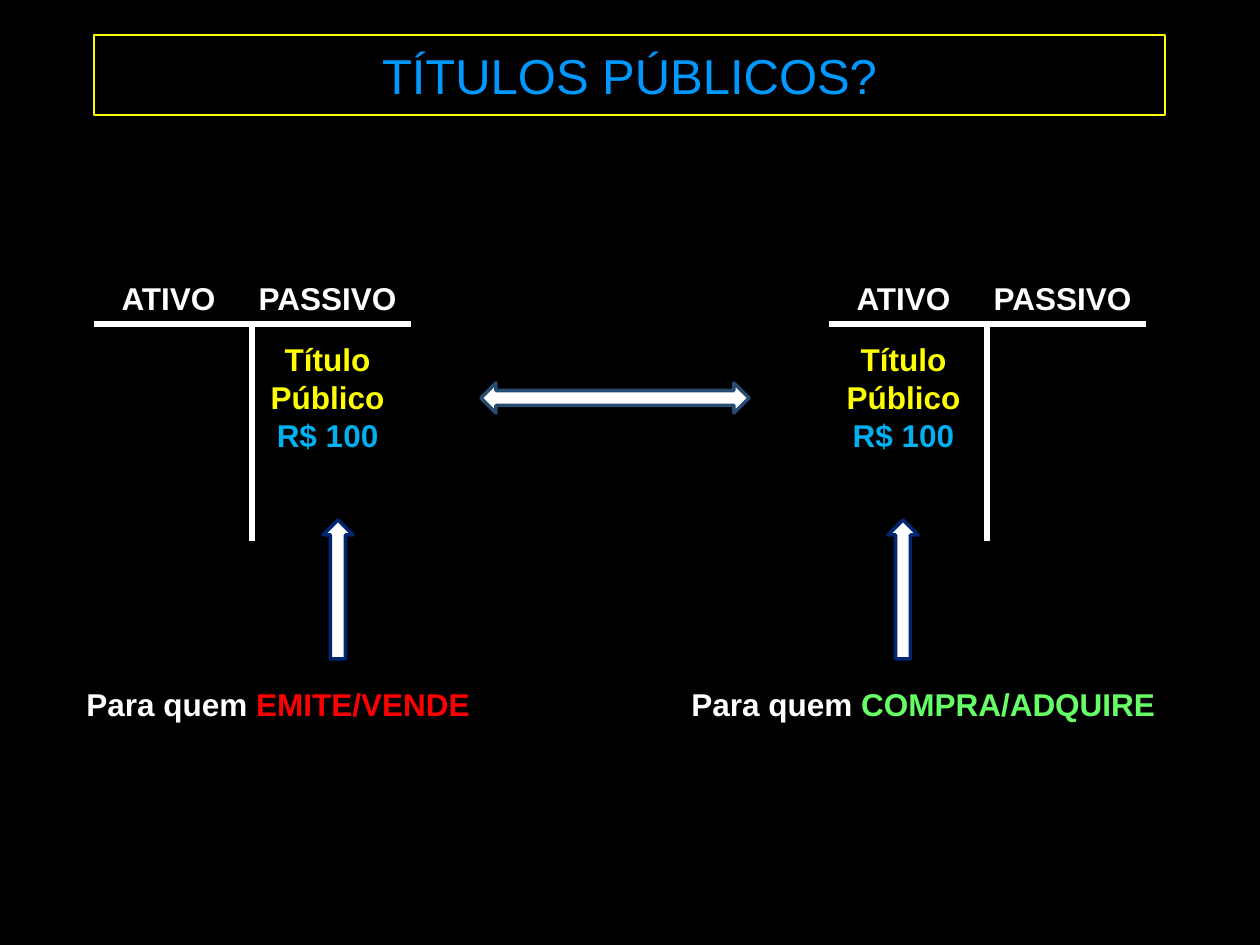
"""Build the slide on public bonds as seen by issuer and buyer."""
from dataclasses import dataclass

from lxml import etree
from pptx import Presentation
from pptx import util as u
from pptx.dml.color import RGBColor
from pptx.enum import shapes, text
from pptx.oxml.ns import qn

EMU_PER_PX = 914400 / 126
WHITE, BLACK, YELLOW = "FFFFFF", "000000", "FFFF00"
COLUMN_WIDTH, ACCOUNT_WIDTH = 169, 317
COLUMN_OFFSETS = {"ATIVO": -10, "PASSIVO": 149}


@dataclass(frozen=True)
class Run:
    """A piece of text in one colour."""
    words: str
    colour: str = WHITE


@dataclass(frozen=True)
class Box:
    """A rectangle in px."""
    left: int
    top: int
    width: int
    height: int

    def emu(self) -> tuple:
        """Return the rectangle in EMU."""
        return px(self.left), px(self.top), px(self.width), px(self.height)


@dataclass(frozen=True)
class Account:
    """A T-account with its bond, arrow and caption."""
    left: int
    bond_column: str
    arrow_left: int
    caption_left: int
    caption_width: int
    role: Run


ACCOUNTS = (
    Account(94, "PASSIVO", 323, 74, 436, Run("EMITE/VENDE", "FF0000")),
    Account(829, "ATIVO", 888, 679, 507, Run("COMPRA/ADQUIRE", "66FF66")),
)


def px(length: int) -> int:
    """Turn px into EMU."""
    return u.Emu(round(length * EMU_PER_PX))


def rgb(value: str) -> RGBColor:
    """Turn a hex string into a colour."""
    return RGBColor.from_string(value)


def style_font(font, size: int, colour: str, bold: bool) -> None:
    """Set the face, size, colour and weight of a font."""
    font.name, font.size, font.bold = "Arial", u.Pt(size), bold
    font.color.rgb = rgb(colour)


def style_outline(shape, fill: str, line: str, width: float) -> None:
    """Set the fill and the outline of a shape."""
    shape.fill.solid()
    shape.fill.fore_color.rgb = rgb(fill)
    shape.line.color.rgb = rgb(line)
    shape.line.width = u.Pt(width)


def add_title(slide, words: str) -> None:
    """Fill and frame the title placeholder."""
    title = slide.shapes.title
    title.left, title.top, title.width, title.height = Box(94, 35, 1071, 80).emu()
    style_outline(title, BLACK, YELLOW, 0.75)
    frame = title.text_frame
    frame.text = words
    frame.vertical_anchor = text.MSO_ANCHOR.MIDDLE
    frame.paragraphs[0].alignment = text.PP_ALIGN.CENTER
    style_font(frame.paragraphs[0].runs[0].font, 28, "0099FF", False)


def add_label(slide, box: Box, lines: list[list[Run]],
              align=text.PP_ALIGN.CENTER) -> None:
    """Add a bold text box with one paragraph per line."""
    frame = slide.shapes.add_textbox(*box.emu()).text_frame
    frame.word_wrap = True
    frame.text = "\n".join("" for _ in lines)
    for paragraph, pieces in zip(frame.paragraphs, lines):
        paragraph.alignment = align
        for piece in pieces:
            run = paragraph.add_run()
            run.text = piece.words
            style_font(run.font, 18, piece.colour, True)


def add_rule(slide, x1: int, y1: int, x2: int, y2: int) -> None:
    """Add a thick white line without a shadow."""
    rule = slide.shapes.add_connector(
        shapes.MSO_CONNECTOR.STRAIGHT, px(x1), px(y1), px(x2), px(y2))
    rule.line.color.rgb = rgb(WHITE)
    rule.line.width = u.Pt(3)
    etree.SubElement(rule._element.spPr, qn("a:effectLst"))


def add_arrow(slide, kind, box: Box, line: str) -> None:
    """Add a white block arrow."""
    arrow = slide.shapes.add_shape(kind, *box.emu())
    arrow.shadow.inherit = False
    style_outline(arrow, WHITE, line, 2)


def add_account(slide, account: Account) -> None:
    """Draw a T-account with everything that belongs to it."""
    left, middle = account.left, account.left + ACCOUNT_WIDTH // 2
    add_rule(slide, left, 324, left + ACCOUNT_WIDTH, 324)
    add_rule(slide, middle, 324, middle, 541)
    for heading, offset in COLUMN_OFFSETS.items():
        add_label(slide, Box(left + offset, 273, COLUMN_WIDTH, 50), [[Run(heading)]])
    bond_left = left + COLUMN_OFFSETS[account.bond_column]
    add_label(slide, Box(bond_left, 334, COLUMN_WIDTH, 127),
              [[Run("Título Público", YELLOW)], [Run("R$ 100", "00B0F0")]])
    add_label(slide, Box(account.caption_left, 679, account.caption_width, 50),
              [[Run("Para quem "), account.role]], text.PP_ALIGN.LEFT)
    add_arrow(slide, shapes.MSO_SHAPE.UP_ARROW,
              Box(account.arrow_left, 520, 30, 139), "002671")


def main() -> None:
    """Build and save the slide."""
    deck = Presentation()
    deck.slide_width, deck.slide_height = px(1260), px(945)
    slide = deck.slides.add_slide(deck.slide_layouts.get_by_name("Title Only"))
    slide.background.fill.solid()
    slide.background.fill.fore_color.rgb = rgb(BLACK)
    add_title(slide, "TÍTULOS PÚBLICOS?")
    for account in ACCOUNTS:
        add_account(slide, account)
    add_arrow(slide, shapes.MSO_SHAPE.LEFT_RIGHT_ARROW,
              Box(481, 383, 268, 30), "264C73")
    deck.save("out.pptx")


if __name__ == "__main__":
    main()
